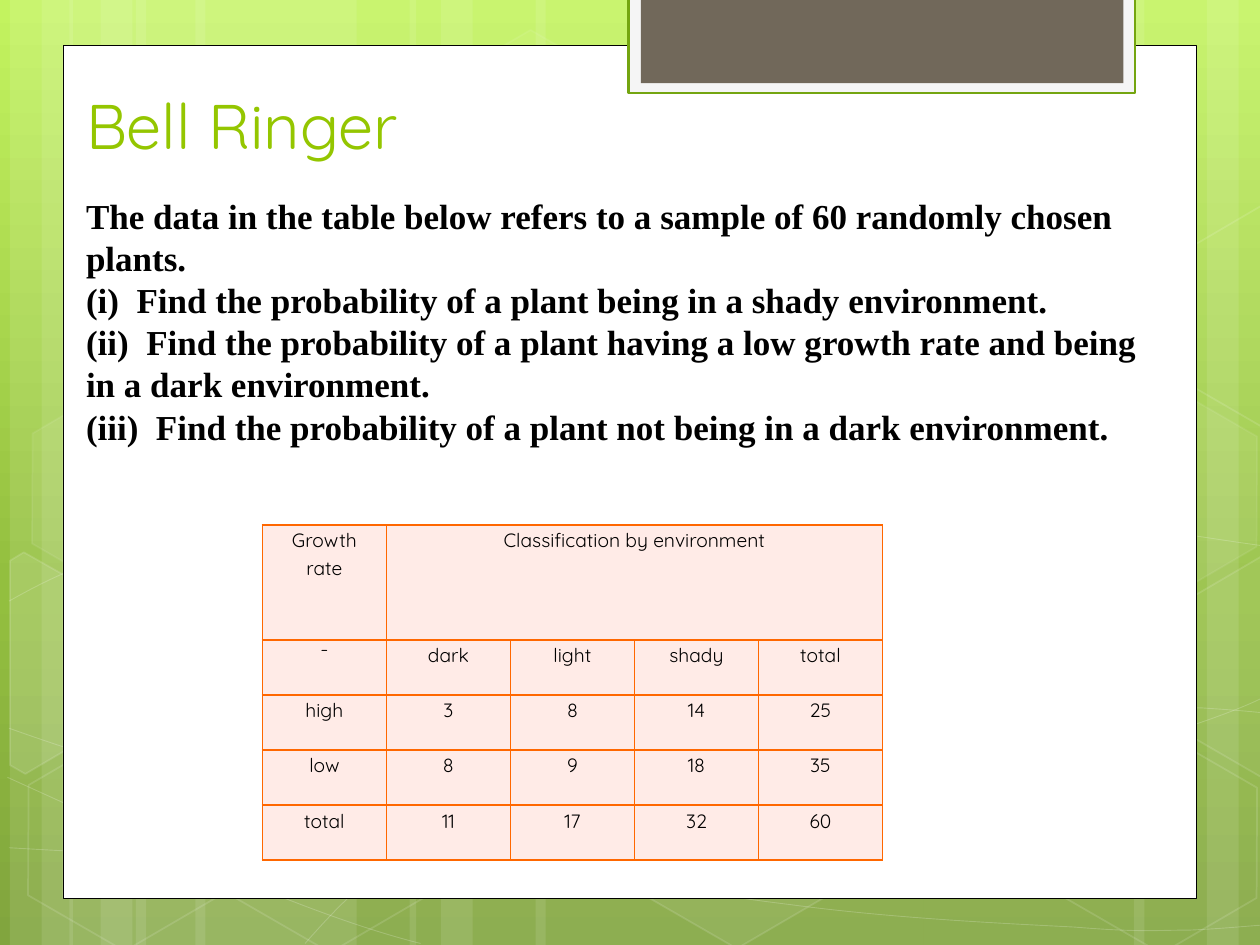
import copy
import dataclasses
import math

import pptx
import pptx.dml.color
import pptx.enum.shapes
import pptx.enum.text
import pptx.oxml
import pptx.oxml.ns
import pptx.util

Cm = pptx.util.Cm
Pt = pptx.util.Pt
qn = pptx.oxml.ns.qn
SHAPES = pptx.enum.shapes.MSO_SHAPE
ALIGN = pptx.enum.text.PP_ALIGN
ANCHOR = pptx.enum.text.MSO_ANCHOR


@dataclasses.dataclass(frozen=True)
class Theme:
    """Colours, fonts and type sizes of the slide."""

    gradient: tuple = ((0, "C3F35F"), (0.62, "93BF3F"), (1, "81A53E"))
    white: str = "FFFFFF"
    black: str = "000000"
    title: str = "94C600"
    tab_frame: str = "F5F5F5"
    tab_line: str = "74A510"
    tab: str = "71685A"
    cell: str = "FFEBE7"
    border: str = "FF6700"
    display_font: str = "Quicksand"
    text_font: str = "Times New Roman"
    title_size: int = 36
    text_size: int = 20
    table_size: int = 11


def rgb(value):
    """Return the colour for a hex value."""
    return pptx.dml.color.RGBColor.from_string(value)


def drawing(tag, attributes="", content=""):
    """Return a DrawingML element."""
    return pptx.oxml.parse_xml(f'<a:{tag} {pptx.oxml.ns.nsdecls("a")} {attributes}>{content}</a:{tag}>')


def set_attributes(target, values):
    """Set every attribute in the dict on the target."""
    for name, value in values.items():
        setattr(target, name, value)


def turn_back(points, center, degrees):
    """Return the points turned counter-clockwise about the center."""
    cosine, sine = math.cos(math.radians(degrees)), math.sin(math.radians(degrees))
    offsets = [(x - center[0], y - center[1]) for x, y in points]
    return [(center[0] + x * cosine + y * sine, center[1] - x * sine + y * cosine) for x, y in offsets]


class SlideBuilder:
    """Holds the theme and the current slide and adds elements to it."""

    def __init__(self, slide, theme):
        self.slide = slide
        self.theme = theme

    def background(self):
        """Fill the background with the vertical gradient."""
        fill = self.slide.background.fill
        fill.gradient()
        fill.gradient_angle = 270
        stop_list = self.slide.element.find(".//" + qn("a:gsLst"))
        stop_list.append(copy.deepcopy(stop_list[0]))
        for stop, (position, colour) in zip(fill.gradient_stops, self.theme.gradient):
            stop.position = position
            stop.color.rgb = rgb(colour)

    def paint(self, shape, fill=None, line=None, width=1, fill_alpha=100, line_alpha=100):
        """Give a shape its fill, line and opacities in percent."""
        shape.shadow.inherit = False
        alphas = []
        for target, colour, alpha in ((shape.fill, fill, fill_alpha), (shape.line.fill, line, line_alpha)):
            if colour is None or alpha == 0:
                target.background()
            else:
                target.solid()
                target.fore_color.rgb = rgb(colour)
                alphas.append(alpha)
        if line:
            shape.line.width = Pt(width)
        for element, alpha in zip(shape.element.spPr.iter(qn("a:srgbClr")), alphas):
            if alpha < 100:
                element.append(drawing("alpha", f'val="{alpha * 1000}"'))

    def preset(self, kind, box, **style):
        """Add a preset shape."""
        shape = self.slide.shapes.add_shape(kind, *map(Cm, box))
        self.paint(shape, **style)
        return shape

    def hexagon(self, left, top, fill_alpha, line_alpha):
        """Add a translucent tilted hexagon."""
        shape = self.preset(SHAPES.HEXAGON, (left, top, 4.45, 3.86), fill=self.theme.white,
                            line=self.theme.white, fill_alpha=fill_alpha, line_alpha=line_alpha)
        shape.rotation = 30
        shape.adjustments[0] = 0.285

    def outline(self, points, close, **style):
        """Add a freeform through the points."""
        start, *rest = [(Cm(x), Cm(y)) for x, y in points]
        builder = self.slide.shapes.build_freeform(*start)
        builder.add_line_segments(rest, close=close)
        shape = builder.convert_to_shape()
        self.paint(shape, **style)
        return shape

    def curve(self, points):
        """Add a faint Bezier curve from a start point and groups of three points."""
        shape = self.outline(points, False, line=self.theme.white, width=0.5, line_alpha=20)
        segments = list(shape.element.iter(qn("a:lnTo")))
        for first in range(0, len(segments), 3):
            bezier = drawing("cubicBezTo")
            segments[first].addprevious(bezier)
            for segment in segments[first:first + 3]:
                bezier.append(segment[0])
                segment.getparent().remove(segment)

    def cut_hexagon(self, corners, center, fill_alpha):
        """Add a tilted hexagon cut off at the slide edge."""
        shape = self.outline(turn_back(corners, center, 30), True, fill=self.theme.white,
                             line=self.theme.white, fill_alpha=fill_alpha, line_alpha=12)
        shape.rotation = 30

    def format_paragraph(self, paragraph, colour, paragraph_format, font_format):
        """Format one paragraph and its font."""
        set_attributes(paragraph, paragraph_format)
        set_attributes(paragraph.font, font_format)
        paragraph.font.color.rgb = rgb(colour)

    def placeholder(self, index, box, lines, anchor, colour, font_format):
        """Fill a placeholder and bring it to the front."""
        shape = self.slide.placeholders[index]
        set_attributes(shape, dict(zip(("left", "top", "width", "height"), map(Cm, box))))
        frame = shape.text_frame
        frame.text = "\n".join(lines)
        set_attributes(frame, {"word_wrap": True, "vertical_anchor": anchor,
                               "auto_size": pptx.enum.text.MSO_AUTO_SIZE.NONE})
        for paragraph in frame.paragraphs:
            self.format_paragraph(paragraph, colour, {"alignment": ALIGN.LEFT, "space_before": Pt(0)}, font_format)
        for properties in shape.element.iter(qn("a:pPr")):
            properties.set("marL", "0")
            properties.set("indent", "0")
            properties.append(drawing("buNone"))
        shape.element.getparent().append(shape.element)

    def table(self, left, top, column_width, row_heights, rows):
        """Add a bordered table whose first row spans all but one column."""
        theme = self.theme
        columns = len(rows[-1])
        frame = self.slide.shapes.add_table(len(rows), columns, Cm(left), Cm(top),
                                            Cm(column_width * columns), Cm(sum(row_heights)))
        table = frame.table
        set_attributes(table, {"first_row": False, "horz_banding": False})
        for column in table.columns:
            column.width = Cm(column_width)
        for row, height in zip(table.rows, row_heights):
            row.height = Cm(height)
        table.cell(0, 1).merge(table.cell(0, columns - 1))
        for row, texts in enumerate(rows):
            for column, text in enumerate(texts):
                table.cell(row, column).text = text
        for cell in table.iter_cells():
            set_attributes(cell, {"margin_left": Cm(0.18), "margin_right": Cm(0.18),
                                  "margin_top": 0, "margin_bottom": 0})
            cell.fill.solid()
            cell.fill.fore_color.rgb = rgb(theme.cell)
            self.format_paragraph(cell.text_frame.paragraphs[0], theme.black,
                                  {"alignment": ALIGN.CENTER, "line_spacing": 1.15},
                                  {"name": theme.display_font, "size": Pt(theme.table_size)})
        border = f'<a:solidFill><a:srgbClr val="{theme.border}"/></a:solidFill>'
        for properties in frame.element.iter(qn("a:tcPr")):
            for position, side in enumerate("LRTB"):
                properties.insert(position, drawing(f"ln{side}", f'w="{Pt(1)}"', border))


BARS = [(2.74, 4.45), (0.2, 1.27), (0.84, 2.11), (3.94, 4.45), (1.4, 1.27), (2.03, 2.11),
        (18.62, 4.45), (24.33, 1.27), (22.86, 2.11), (10.8, 7.82), (8.26, 1.27), (8.89, 2.11)]
CURVES = [
    [(0.18, 17.09), (1.55, 17.17), (2.92, 17.25), (4.83, 17.22), (6.73, 17.2), (9.09, 17.15), (11.63, 16.89),
     (14.17, 16.64), (17.78, 16.15), (20.12, 15.67), (22.43, 15.19), (24.82, 14.43), (25.58, 14)],
    [(0.18, 12.12), (0.91, 11.71), (1.65, 11.33), (3.07, 10.95), (4.52, 10.57), (6.58, 10.01), (8.81, 9.83),
     (11.07, 9.65), (13.82, 9.63), (16.61, 9.83), (19.41, 10.03), (24.05, 10.82), (25.58, 11.02)],
    [(0.15, 15.67), (3.23, 17.07), (6.27, 18.47), (8.48, 19.02)],
    [(0.18, 14.68), (0.97, 14.96), (1.78, 15.24), (3.25, 15.65), (4.72, 16.03), (6.93, 16.66), (9.07, 17.09),
     (11.18, 17.53), (13.84, 17.98), (15.95, 18.24), (18.06, 18.52), (20.32, 18.62), (21.67, 18.69),
     (22.99, 18.8), (23.34, 18.75), (24, 18.75), (24.66, 18.72), (25.12, 18.67), (25.58, 18.64)],
    [(6.15, 19.02), (6.6, 18.51), (7.06, 18.01), (7.67, 17.55), (8.28, 17.09), (9.14, 16.59), (9.86, 16.23),
     (10.57, 15.88), (11, 15.72), (11.94, 15.47), (12.85, 15.21), (14.55, 14.86), (15.44, 14.68),
     (16.36, 14.5), (16.48, 14.5), (17.27, 14.45), (18.06, 14.38), (19.3, 14.3), (20.17, 14.27),
     (21.06, 14.25), (22.5, 14.27), (22.5, 14.27), (23.07, 14.27), (23.64, 14.27), (24.21, 14.27),
     (24.66, 14.3), (25.1, 14.33), (25.55, 14.38)],
]
HEXAGONS = [(8.48, 0.91, 4, 8), (12.62, 14.96, 6, 12), (0.28, 15.01, 0, 12), (0.36, 7.92, 7, 8),
            (4.42, 15.04, 0, 12), (19.13, 11.51, 10, 12), (21.18, 15.06, 0, 12), (21.18, 7.98, 7, 8)]
LEFT_CUT = [(0.2, 11.3), (0.48, 11.13), (2.44, 12.24), (2.41, 14.48), (0.51, 15.6), (0.2, 15.42)]
RIGHT_CUT = [(23.52, 5.26), (25.43, 4.14), (25.65, 4.27), (25.63, 8.51), (25.45, 8.61), (23.52, 7.49)]
QUESTIONS = [
    "The data in the table below refers to a sample of 60 randomly chosen plants.",
    "(i)  Find the probability of a plant being in a shady environment.",
    "(ii)  Find the probability of a plant having a low growth rate and being in a dark environment.",
    "(iii)  Find the probability of a plant not being in a dark environment.",
]
GROWTH_ROWS = [["Growth rate", "Classification by environment"], ["¯", "dark", "light", "shady", "total"],
               ["high", "3", "8", "14", "25"], ["low", "8", "9", "18", "35"], ["total", "11", "17", "32", "60"]]


def main():
    """Build the Bell Ringer slide and save it."""
    presentation = pptx.Presentation()
    set_attributes(presentation, {"slide_width": Cm(25.4), "slide_height": Cm(19.05)})
    theme = Theme()
    builder = SlideBuilder(presentation.slides.add_slide(presentation.slide_layouts[1]), theme)
    builder.background()
    for left, width in BARS:
        builder.preset(SHAPES.RECTANGLE, (left, 0, width, 19.05), fill=theme.white, fill_alpha=10)
    for points in CURVES:
        builder.curve(points)
    for hexagon in HEXAGONS:
        builder.hexagon(*hexagon)
    builder.cut_hexagon(LEFT_CUT, (0.91, 13.59), 10)
    for drop, fill_alpha in ((7.07, 4), (0, 0)):
        builder.cut_hexagon([(x, y + drop) for x, y in RIGHT_CUT], (25.02, 6.12 + drop), fill_alpha)
    builder.preset(SHAPES.RECTANGLE, (1.27, 0.91, 22.86, 17.2), fill=theme.white, line=theme.black, width=0.5)
    builder.preset(SHAPES.RECTANGLE, (12.67, -0.05, 10.21, 1.93),
                   fill=theme.tab_frame, line=theme.tab_line, width=1.25)
    builder.preset(SHAPES.RECTANGLE, (12.92, -0.05, 9.73, 1.73), fill=theme.tab)
    builder.placeholder(0, (1.48, 2.13, 15.67, 1.27), ["Bell Ringer"], ANCHOR.BOTTOM, theme.title,
                        {"name": theme.display_font, "size": Pt(theme.title_size)})
    builder.table(5.29, 10.58, 2.5, [2.32] + [1.11] * 4, GROWTH_ROWS)
    builder.placeholder(1, (1.48, 3.78, 22.43, 5.38), QUESTIONS, ANCHOR.MIDDLE, theme.black,
                        {"name": theme.text_font, "size": Pt(theme.text_size), "bold": True})
    presentation.save("out.pptx")


if __name__ == "__main__":
    main()
